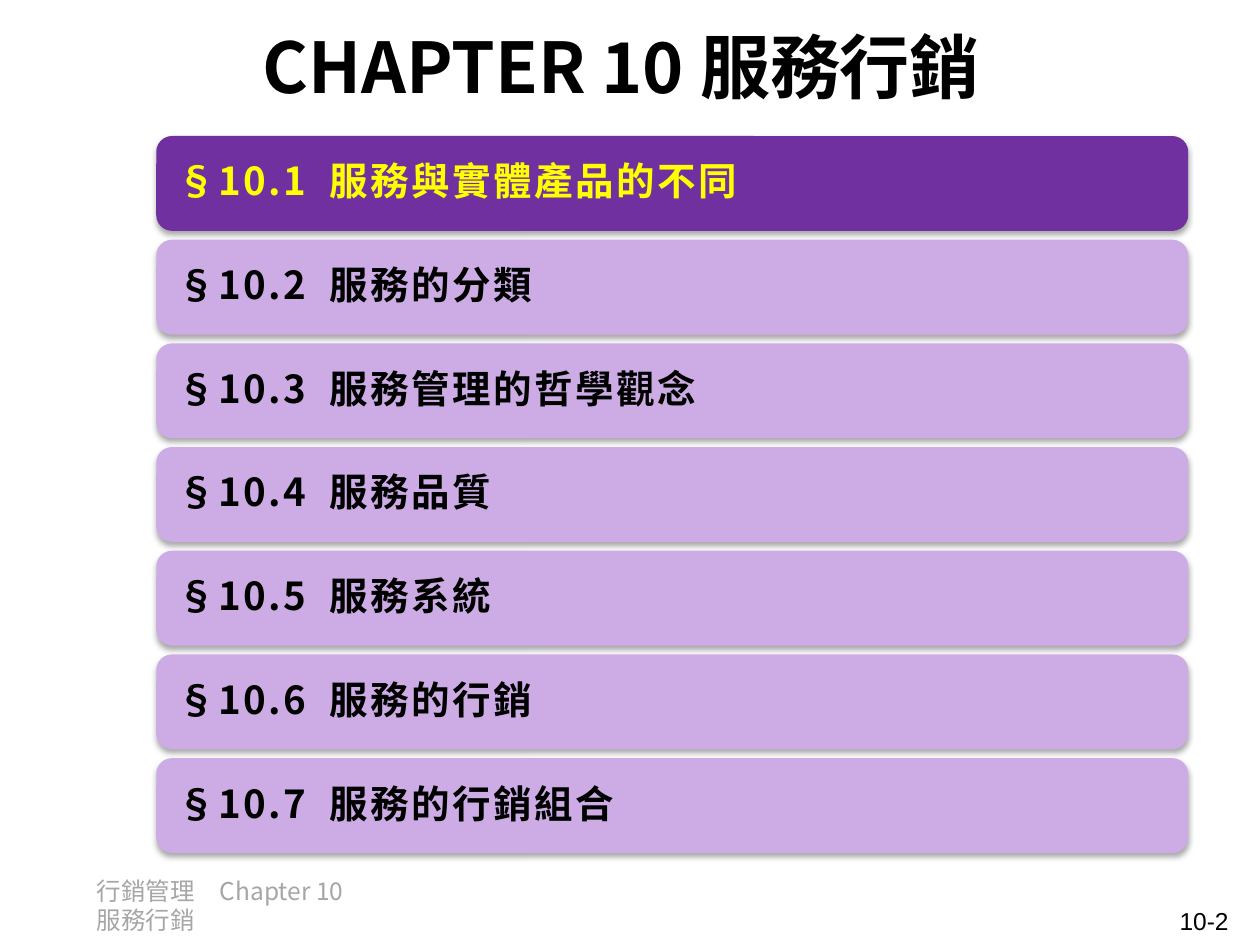
from dataclasses import dataclass

from lxml import etree
from pptx import Presentation, util as u
from pptx.dml.color import RGBColor
from pptx.enum import shapes, text
from pptx.oxml import ns
from pptx.util import Inches


@dataclass(frozen=True)
class Theme:
    black: str = "000000"
    footer_grey: str = "A6A6A6"
    active_fill: str = "7030A0"
    active_text: str = "FFFF00"
    bar_fill: str = "CDACE6"
    cjk_font: str = "Noto Sans CJK SC"
    latin_font: str = "Arial"
    title_size: int = 40
    bar_size: int = 22
    footer_size: int = 14


THEME = Theme()

SECTIONS = [
    "服務與實體產品的不同",
    "服務的分類",
    "服務管理的哲學觀念",
    "服務品質",
    "服務系統",
    "服務的行銷",
    "服務的行銷組合",
]


def add_xml(parent, tag, **attrs):
    return etree.SubElement(parent, ns.qn(tag), {k: str(v) for k, v in attrs.items()})


def add_run(p, words, size, color, font=THEME.cjk_font, bold=False, spacing=0):
    r = p.add_run()
    r.text = words
    for name, value in {"size": u.Pt(size), "bold": bold, "name": font}.items():
        setattr(r.font, name, value)
    r.font.color.rgb = RGBColor.from_string(color)
    props = r.font._element
    add_xml(props, "a:ea", typeface=THEME.cjk_font)
    if spacing:
        props.set("spc", str(round(spacing * 100)))


def add_label(s, box, words, size, color, align=text.PP_ALIGN.LEFT,
              anchor=text.MSO_ANCHOR.TOP, **run_format):
    tf = s.shapes.add_textbox(*map(Inches, box)).text_frame
    tf.word_wrap = True
    tf.vertical_anchor = anchor
    p = tf.paragraphs[0]
    p.alignment = align
    add_run(p, words, size, color, **run_format)


def add_soft_shadow(sp):
    sp.shadow.inherit = False
    effects = sp._element.spPr.find(ns.qn("a:effectLst"))
    shadow = add_xml(effects, "a:outerShdw", blurRad=u.Pt(3.1), dist=u.Pt(1.8),
                     dir=90 * 60000, rotWithShape=0)
    add_xml(add_xml(shadow, "a:srgbClr", val=THEME.black), "a:alpha", val=35000)


def add_section_bar(s, box, number, heading, active):
    sp = s.shapes.add_shape(shapes.MSO_SHAPE.ROUNDED_RECTANGLE, *map(Inches, box))
    sp.fill.solid()
    sp.fill.fore_color.rgb = RGBColor.from_string(
        THEME.active_fill if active else THEME.bar_fill)
    sp.line.fill.background()
    add_soft_shadow(sp)

    tf = sp.text_frame
    frame_format = {
        "word_wrap": True,
        "vertical_anchor": text.MSO_ANCHOR.MIDDLE,
        "margin_left": Inches(0.13),
        "margin_right": Inches(0.13),
    }
    for name, value in frame_format.items():
        setattr(tf, name, value)

    p = tf.paragraphs[0]
    tabs = add_xml(p._p.get_or_add_pPr(), "a:tabLst")
    add_xml(tabs, "a:tab", pos=Inches(1.21), algn="l")
    paragraph_format = {
        "alignment": text.PP_ALIGN.LEFT,
        "line_spacing": 0.9,
        "space_after": u.Pt(7.7),
    }
    for name, value in paragraph_format.items():
        setattr(p, name, value)
    color = THEME.active_text if active else THEME.black
    run_format = {"size": THEME.bar_size, "color": color, "bold": True, "spacing": 1.5}
    add_run(p, f"§{number}\t", **run_format)
    add_run(p, heading, font=THEME.latin_font, **run_format)


def add_section_list(s, box, chapter, headings, active=0, gap=0.07):
    """Stack one bar per section, evenly filling the box."""
    left, top, width, height = box
    bar_height = (height - gap * (len(headings) - 1)) / len(headings)
    for i, heading in enumerate(headings):
        bar = (left, top + i * (bar_height + gap), width, bar_height)
        add_section_bar(s, bar, f"{chapter}.{i + 1}", heading, i == active)


def add_footer(s, box, words, page):
    left, top, width, height = box
    add_label(s, (left, top, 2.44, 0.4), words, THEME.footer_size, THEME.footer_grey)
    add_label(s, (left + width - 2.33, top + height - 0.29, 2.33, 0.29), page,
              THEME.footer_size, THEME.black, text.PP_ALIGN.RIGHT,
              font=THEME.latin_font)


def main():
    prs = Presentation()
    prs.slide_width, prs.slide_height = Inches(10), Inches(7.5)
    s = prs.slides.add_slide(prs.slide_layouts[6])
    add_label(s, (0.43, 0.04, 9, 0.96), "CHAPTER 10 服務行銷", THEME.title_size,
              THEME.black, text.PP_ALIGN.CENTER, text.MSO_ANCHOR.MIDDLE, bold=True)
    add_section_list(s, (1.24, 1.08, 8.19, 5.69), 10, SECTIONS)
    add_footer(s, (0.67, 6.9, 9.18, 0.53), "行銷管理　Chapter 10　服務行銷", "10-2")
    prs.save("out.pptx")


if __name__ == "__main__":
    main()
